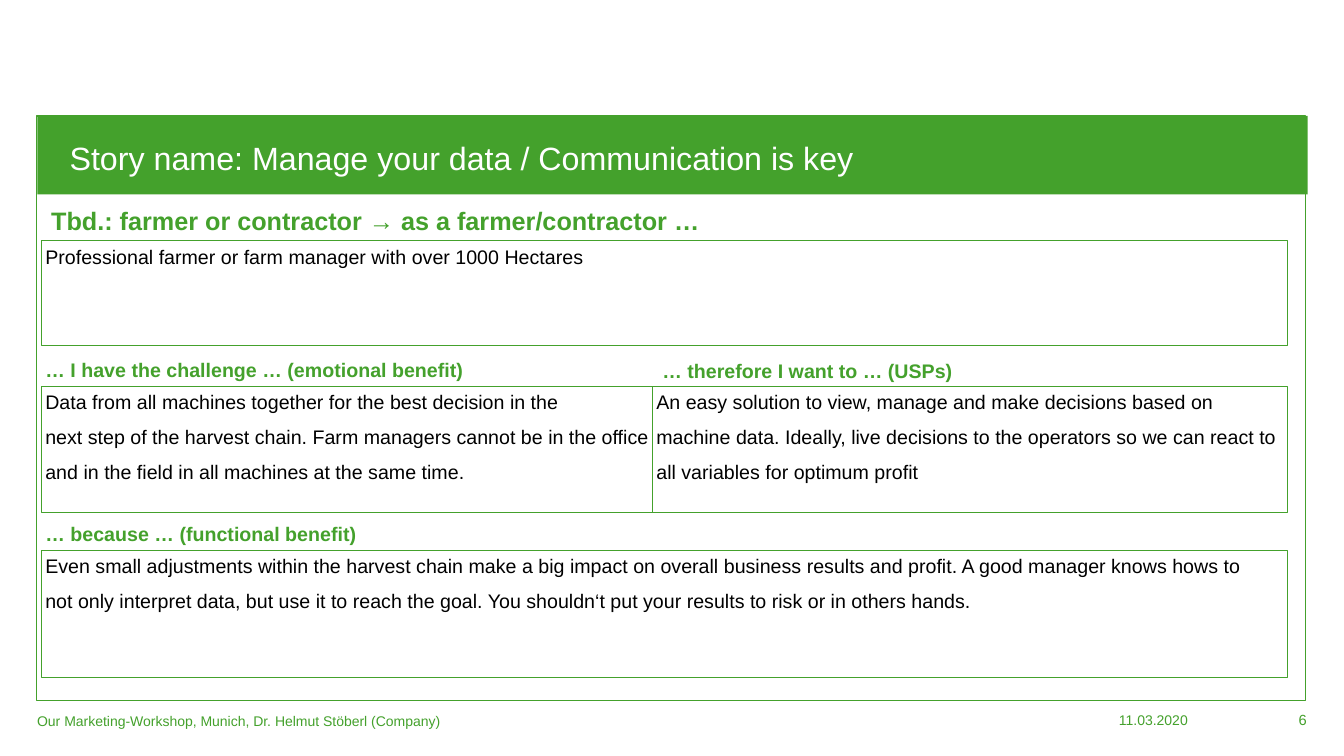
from dataclasses import dataclass

from pptx import Presentation
from pptx.dml.color import RGBColor
from pptx.enum.shapes import MSO_SHAPE
from pptx.enum.text import MSO_ANCHOR, MSO_AUTO_SIZE, PP_ALIGN
from pptx.shapes.autoshape import Shape
from pptx.slide import Slide
from pptx.util import Inches, Pt


@dataclass(frozen=True)
class Theme:
    font: str = "Arial"
    green: RGBColor = RGBColor(0x44, 0xA1, 0x2C)
    white: RGBColor = RGBColor(0xFF, 0xFF, 0xFF)
    black: RGBColor = RGBColor(0, 0, 0)
    title_size: float = 23
    heading_size: float = 18
    body_size: float = 14
    page_size: float = 10.5
    footer_size: float = 10
    line_gap: float = 8


@dataclass(frozen=True)
class Area:
    left: float
    top: float
    width: float
    height: float

    def lengths(self) -> tuple:
        return tuple(Inches(n) for n in (self.left, self.top, self.width, self.height))


@dataclass(frozen=True)
class Label:
    text: str
    area: Area
    size: float
    bold: bool = True
    wrap: bool = False
    insets: tuple[float, float] = (0.04, 0.04)
    align: PP_ALIGN = PP_ALIGN.LEFT
    anchor: MSO_ANCHOR = MSO_ANCHOR.TOP


@dataclass(frozen=True)
class Answer:
    lines: tuple[str, ...]
    area: Area


THEME = Theme()
LEFT, MIDDLE, RIGHT = 0.41, 6.47, 12.77
FULL_WIDTH = RIGHT - LEFT
WIDE_INSETS = (0.1, 0.05)

TITLE = "Story name: Manage your data / Communication is key"
TITLE_AREA = Area(0.69, 1.41, 11.21, 0.35)
FRAME_AREA = Area(0.36, 1.15, 12.59, 5.8)
BAND_AREA = Area(0.37, 1.15, 12.6, 0.78)

LABELS = (
    Label("6", Area(11.92, 7.05, 1.04, 0.18), THEME.page_size, bold=False,
          wrap=True, insets=(0, 0), align=PP_ALIGN.RIGHT),
    Label("11.03.2020", Area(7.94, 7.06, 3.84, 0.17), THEME.footer_size, bold=False,
          wrap=True, insets=(0, 0), align=PP_ALIGN.RIGHT, anchor=MSO_ANCHOR.MIDDLE),
    Label("Our Marketing-Workshop, Munich, Dr. Helmut Stöberl (Company)",
          Area(0.27, 6.95, 10.09, 0.4), THEME.footer_size, bold=False,
          wrap=True, insets=WIDE_INSETS, anchor=MSO_ANCHOR.MIDDLE),
    Label("Tbd.: farmer or contractor → as a farmer/contractor …",
          Area(LEFT, 1.99, 6.75, 0.4), THEME.heading_size, insets=WIDE_INSETS),
    Label("… I have the challenge … (emotional benefit)",
          Area(LEFT, 3.51, 4.29, 0.32), THEME.body_size),
    Label("… therefore I want to … (USPs)",
          Area(MIDDLE, 3.51, 3.15, 0.34), THEME.body_size, insets=WIDE_INSETS),
    Label("… because … (functional benefit)",
          Area(LEFT, 5.14, 3.17, 0.32), THEME.body_size),
)

ANSWERS = (
    Answer(("Professional farmer or farm manager with over 1000 Hectares",),
           Area(LEFT, 2.39, FULL_WIDTH, 1.04)),
    Answer(("Data from all machines together for the best decision in the",
            "next step of the harvest chain. Farm managers cannot be in the office",
            "and in the field in all machines at the same time."),
           Area(LEFT, 3.83, MIDDLE - LEFT, 1.26)),
    Answer(("An easy solution to view, manage and make decisions based on",
            "machine data. Ideally, live decisions to the operators so we can react to",
            "all variables for optimum profit"),
           Area(MIDDLE, 3.83, RIGHT - MIDDLE, 1.26)),
    Answer(("Even small adjustments within the harvest chain make a big impact on overall "
            "business results and profit. A good manager knows hows to",
            "not only interpret data, but use it to reach the goal. You shouldn‘t put your "
            "results to risk or in others hands."),
           Area(LEFT, 5.46, FULL_WIDTH, 1.26)),
)


def write(holder: Shape, lines: tuple[str, ...], size: float, color: RGBColor,
          bold: bool = False, wrap: bool = True,
          insets: tuple[float, float] = (0.04, 0.04),
          align: PP_ALIGN = PP_ALIGN.LEFT,
          anchor: MSO_ANCHOR = MSO_ANCHOR.TOP) -> None:
    frame = holder.text_frame
    frame.text = "\n".join(lines)
    frame.auto_size = MSO_AUTO_SIZE.NONE
    frame.word_wrap = wrap
    frame.vertical_anchor = anchor
    frame.margin_left = frame.margin_right = Inches(insets[0])
    frame.margin_top = frame.margin_bottom = Inches(insets[1])
    for index, paragraph in enumerate(frame.paragraphs):
        paragraph.alignment = align
        paragraph.space_before = Pt(THEME.line_gap if index else 0)
        for run in paragraph.runs:
            run.font.name = THEME.font
            run.font.size = Pt(size)
            run.font.bold = bold
            run.font.color.rgb = color


def add_rectangle(slide: Slide, area: Area, fill: RGBColor | None = None,
                  line_width: float = 0) -> Shape:
    """Draw a rectangle, with a green outline when line_width is above zero."""
    rectangle = slide.shapes.add_shape(MSO_SHAPE.RECTANGLE, *area.lengths())
    rectangle.shadow.inherit = False
    if fill is None:
        rectangle.fill.background()
    else:
        rectangle.fill.solid()
        rectangle.fill.fore_color.rgb = fill
    if line_width:
        rectangle.line.color.rgb = THEME.green
        rectangle.line.width = Pt(line_width)
    else:
        rectangle.line.fill.background()
    return rectangle


def add_title(slide: Slide) -> None:
    """Fill the title placeholder and lift it above the band."""
    title = slide.shapes.title
    title.left, title.top, title.width, title.height = TITLE_AREA.lengths()
    write(title, (TITLE,), THEME.title_size, THEME.white,
          insets=(0, 0), anchor=MSO_ANCHOR.MIDDLE)
    title.text_frame.paragraphs[0].line_spacing = 0.9
    slide.shapes._spTree.append(title._element)


def add_label(slide: Slide, label: Label) -> None:
    box = slide.shapes.add_textbox(*label.area.lengths())
    write(box, (label.text,), label.size, THEME.green, label.bold, label.wrap,
          label.insets, label.align, label.anchor)


def add_answer(slide: Slide, answer: Answer) -> None:
    box = add_rectangle(slide, answer.area, line_width=0.75)
    write(box, answer.lines, THEME.body_size, THEME.black, wrap=False)


def main() -> None:
    presentation = Presentation()
    presentation.slide_width = Inches(13.33)
    presentation.slide_height = Inches(7.5)
    slide = presentation.slides.add_slide(presentation.slide_layouts[5])

    add_rectangle(slide, FRAME_AREA, THEME.white, line_width=1)
    add_rectangle(slide, BAND_AREA, THEME.green)
    add_title(slide)
    for label in LABELS:
        add_label(slide, label)
    for answer in ANSWERS:
        add_answer(slide, answer)

    presentation.save("out.pptx")


if __name__ == "__main__":
    main()
